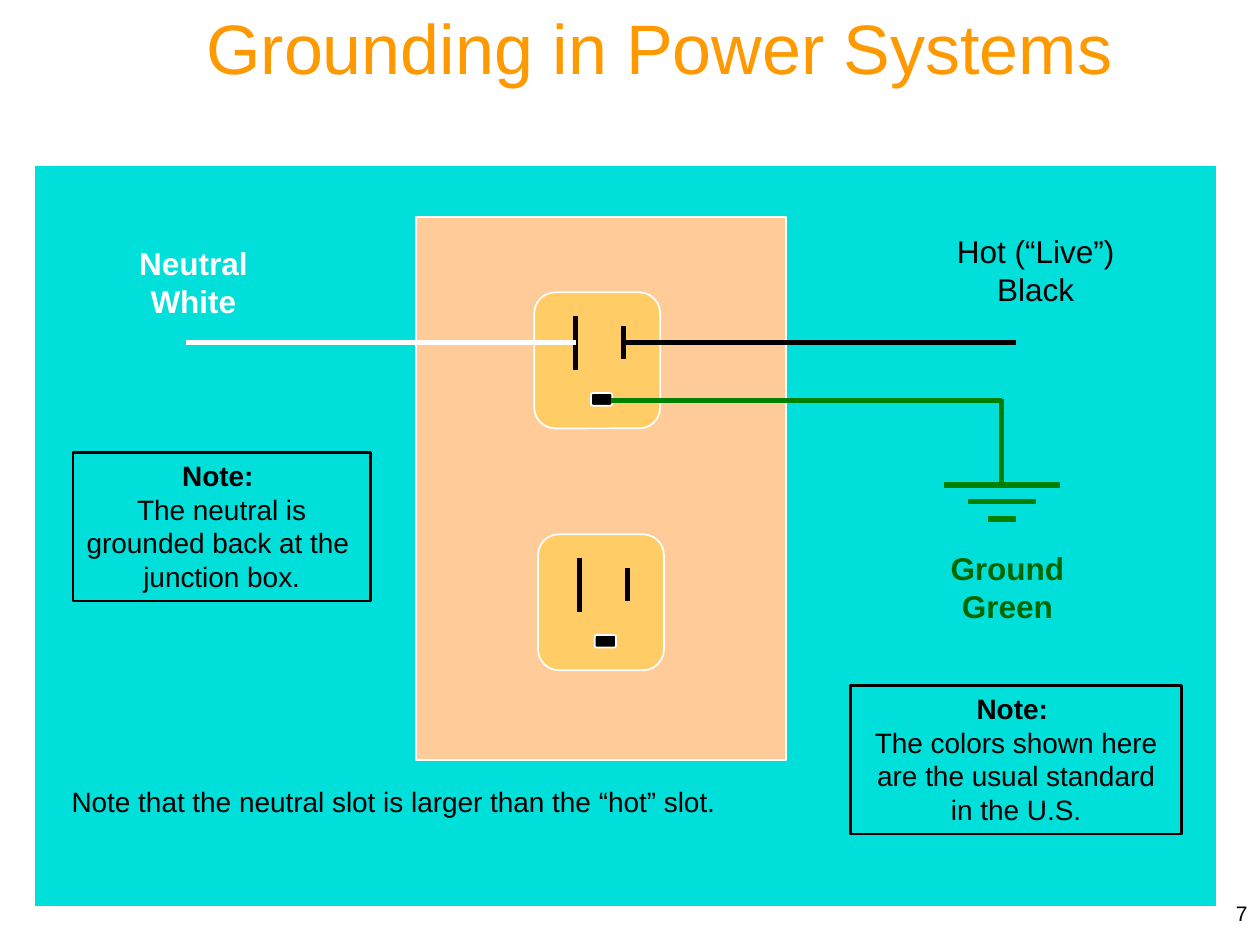
import pptx
import pptx.util
import pptx.dml.color
import pptx.enum.shapes
import pptx.enum.text
import lxml.etree

RGB = pptx.dml.color.RGBColor
WHITE = RGB(255, 255, 255)
BLACK = RGB(0, 0, 0)
CYAN = RGB(0, 223, 218)
PEACH = RGB(255, 204, 153)
GOLD = RGB(255, 204, 102)
ORANGE = RGB(255, 153, 0)
GREEN = RGB(0, 128, 0)
FOREST = RGB(0, 102, 0)

PX = 9144
RECT = pptx.enum.shapes.MSO_SHAPE.RECTANGLE
ROUND = pptx.enum.shapes.MSO_SHAPE.ROUNDED_RECTANGLE
ALIGN = pptx.enum.text.PP_ALIGN
ANCHOR = pptx.enum.text.MSO_ANCHOR


def scale(*sizes):
    """Turn px lengths into EMU."""
    return [pptx.util.Emu(size * PX) for size in sizes]


def panel(shapes, kind, box, fill, edge=WHITE, width=1):
    """Add a flat shape with an outline; a fill of None leaves it clear."""
    shape = shapes.add_shape(kind, *scale(*box))
    shape.shadow.inherit = False
    if fill is None:
        shape.fill.background()
    else:
        shape.fill.solid()
        shape.fill.fore_color.rgb = fill
    shape.line.color.rgb = edge
    shape.line.width = pptx.util.Pt(width)
    return shape


def wire(shapes, color, *ends):
    """Add a thick straight line between two points."""
    kind = pptx.enum.shapes.MSO_CONNECTOR.STRAIGHT
    line = shapes.add_connector(kind, *scale(*ends))
    line.line.color.rgb = color
    line.line.width = pptx.util.Pt(3)
    props = line._element.spPr
    lxml.etree.SubElement(props, pptx.oxml.ns.qn("a:effectLst"))


def write(shape, lines, size, color, bold=(), align=ALIGN.CENTER,
          wrap=True, anchor=ANCHOR.TOP):
    """Fill a shape with paragraphs; bold holds the indexes of bold ones."""
    frame = shape.text_frame
    frame.word_wrap = wrap
    frame.vertical_anchor = anchor
    frame.text = "\n".join(lines)
    for index, para in enumerate(frame.paragraphs):
        para.alignment = align
        para.font.name = "Arial"
        para.font.size = pptx.util.Pt(size)
        para.font.color.rgb = color
        para.font.bold = index in bold


def label(shapes, box, lines, size, color, **style):
    """Add a text box."""
    write(shapes.add_textbox(*scale(*box)), lines, size, color, **style)


def note(shapes, box, lines):
    """Add a framed note with a bold heading."""
    frame = panel(shapes, RECT, box, None, BLACK, 1.5)
    write(frame, ["Note: ", *lines], 16, BLACK, bold=(0,))


def outlet(shapes, box):
    """Draw a socket with neutral, hot and ground slots."""
    left, top = box[:2]
    parts = shapes.add_group_shape().shapes
    panel(parts, ROUND, box, GOLD)
    for x, start, end in ((33, 19, 62), (71, 27, 53)):
        wire(parts, BLACK, left + x, top + start, left + x, top + end)
    panel(parts, ROUND, (left + 45, top + 80, 17, 10), BLACK)


def earth(shapes, box):
    """Draw the ground symbol as three shrinking bars."""
    left, top, width, height = box
    mid = left + width // 2
    for step, half in enumerate((width // 2, 27, 11)):
        y = top + step * height // 2
        wire(shapes, GREEN, mid - half, y, mid + half, y)


def wiring(shapes, box):
    """Draw the wall plate, sockets, wires and wire names."""
    left, top, width, height = box
    panel(shapes, RECT, box, PEACH)
    outlet(shapes, (left + 94, top + 60, 100, 108))
    outlet(shapes, (left + 97, top + 252, 100, 108))
    drop = left + 465
    wire(shapes, GREEN, left + 155, top + 146, drop, top + 146)
    wire(shapes, GREEN, drop, top + 145, drop, top + 213)
    earth(shapes, (drop - 46, top + 213, 92, 27))
    wire(shapes, WHITE, left - 182, top + 100, left + 127, top + 100)
    wire(shapes, BLACK, left + 166, top + 100, left + 476, top + 100)
    names = (
        (-230, 17, 107, ("Neutral", "White"), WHITE, (0, 1)),
        (419, 7, 146, ("Hot (“Live”)", "Black"), BLACK, ()),
        (414, 259, 111, ("Ground", "Green"), FOREST, (0, 1)),
    )
    for x, y, wide, lines, color, bold in names:
        spot = (left + x, top + y, wide, 71)
        label(shapes, spot, lines, 18, color, bold=bold, wrap=False)


def board(shapes, box):
    """Draw the cyan board with the wiring and its notes."""
    left, top = box[:2]
    panel(shapes, RECT, box, CYAN)
    wiring(shapes, (left + 303, top + 41, 294, 431))
    note(shapes, (left + 31, top + 228, 236, 118),
         ("The neutral is grounded back at the ", "junction box."))
    note(shapes, (left + 648, top + 413, 263, 118),
         ("The colors shown here are the usual standard in the U.S.",))
    label(shapes, (left + 20, top + 487, 554, 37),
          ("Note that the neutral slot is larger than the “hot” slot.",),
          16, BLACK, align=ALIGN.LEFT)


def main():
    """Build the slide and save it."""
    deck = pptx.Presentation()
    deck.slide_width, deck.slide_height = scale(1000, 750)
    shapes = deck.slides.add_slide(deck.slide_layouts[6]).shapes
    board(shapes, (27, 131, 939, 589))
    label(shapes, (154, -1, 747, 77), ("Grounding in Power Systems",),
          40, ORANGE, align=ALIGN.LEFT, wrap=False)
    label(shapes, (792, 700, 208, 50), ("7",), 12, BLACK,
          align=ALIGN.RIGHT, anchor=ANCHOR.MIDDLE)
    deck.save("out.pptx")


if __name__ == "__main__":
    main()
